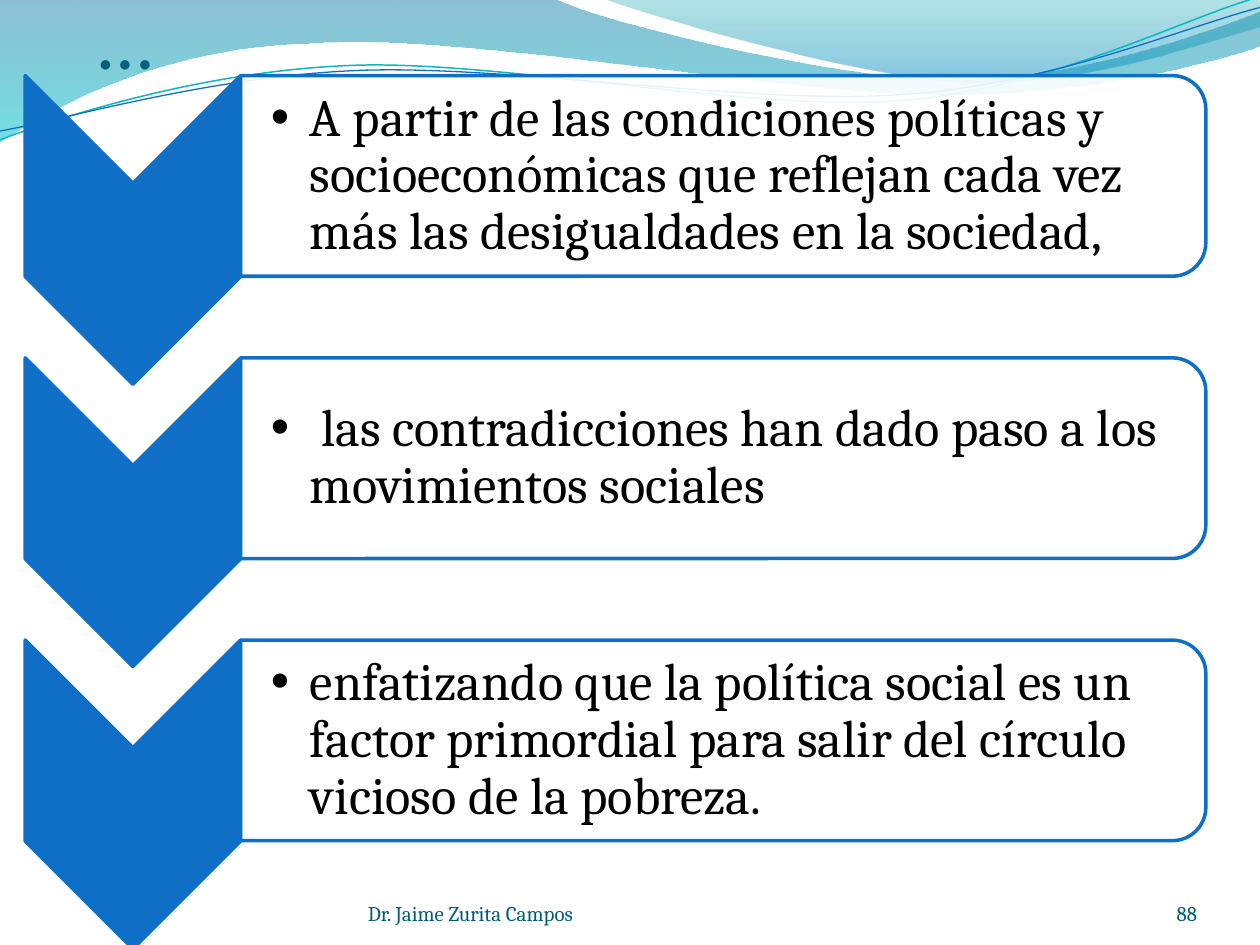
import math
import pptx
import pptx.util
import pptx.dml.color
import pptx.enum.shapes
import pptx.enum.text
import pptx.oxml
import pptx.oxml.ns
import lxml.etree

COLUMNS, ROWS = 10, 7.5
COLORS = {
    "blue": "0F6FC6", "aqua": "0AB8BF", "white": "FFFFFF", "black": "000000",
    "title": "04617B", "footer": "045D75",
    "wave_top": "0074A1", "wave_bottom": "00C6CF",
    "crest_top": "00A1A9", "crest_bottom": "008BBF",
}
STEPS = [
    "A partir de las condiciones políticas y socioeconómicas que reflejan cada vez "
    "más las desigualdades en la sociedad,",
    " las contradicciones han dado paso a los movimientos sociales",
    "enfatizando que la política social es un factor primordial para salir del "
    "círculo vicioso de la pobreza.",
]
WAVE = [
    [(0, 0)], [(4.4, -0.01)],
    [(4.76, 0.17), (6.64, 0.63), (7.58, 0.63)], [(8.53, 0.63), (9.58, 0.26), (10, 0.09)],
    [(10.01, 0.36)],
    [(9.83, 0.44), (8.7, 0.76), (7.46, 0.75)], [(6.22, 0.75), (3.82, 0.28), (2.57, 0.34)],
    [(1.29, 0.36), (0.46, 0.83), (-0.01, 1.13)], [(0, 0)],
]
CREST = [
    [(4.79, -0.01)],
    [(5.09, 0.11), (6.82, 0.62), (7.69, 0.65)], [(8.56, 0.69), (9.61, 0.32), (10, 0.21)],
    [(10, 0)], [(4.79, -0.01)],
]
AQUA_LINE = [
    [(0, 1.11)],
    [(0.48, 0.93), (1.58, 0.57), (2.77, 0.52)], [(3.95, 0.47), (5.93, 0.89), (7.13, 0.8)],
    [(8.33, 0.71), (9.38, 0.15), (9.98, -0.02)],
]
BLUE_LINE = [
    [(0, 1.04)],
    [(0.47, 0.96), (1.64, 0.61), (2.83, 0.56)], [(4.03, 0.51), (5.97, 0.84), (7.17, 0.75)],
    [(8.36, 0.67), (9.41, 0.21), (10, 0.06)],
]
LINE_TILT = -2.7

presentation = pptx.Presentation()
presentation.slide_width = pptx.util.Inches(10)
presentation.slide_height = pptx.util.Inches(7.5)


def across(columns):
    return round(presentation.slide_width * columns / COLUMNS)


def down(rows):
    return round(presentation.slide_height * rows / ROWS)


def rgb(name):
    return pptx.dml.color.RGBColor.from_string(COLORS[name])


def set_alpha(color_element, percent):
    alpha = lxml.etree.SubElement(color_element, pptx.oxml.ns.qn("a:alpha"))
    alpha.set("val", str(percent * 1000))


def set_line(shape, color, width):
    shape.line.color.rgb = rgb(color)
    shape.line.width = pptx.util.Pt(width)


def turn(point, degrees):
    x, y = point
    cosine, sine = math.cos(math.radians(degrees)), math.sin(math.radians(degrees))
    return x * cosine - y * sine, x * sine + y * cosine


def bend(shape, segments):
    steps = list(shape._element.iter(pptx.oxml.ns.qn("a:lnTo")))
    for segment in segments[1:]:
        group, steps = steps[:len(segment)], steps[len(segment):]
        if len(segment) == 3:
            curve = lxml.etree.Element(pptx.oxml.ns.qn("a:cubicBezTo"))
            group[0].addprevious(curve)
            for step in group:
                curve.append(step[0])
                step.getparent().remove(step)


def add_outline(slide, box, segments, close=False, tilt=0):
    left, top, width, height = box
    points = [turn((across(left + x * width / COLUMNS), down(top + y * height)), -tilt)
              for segment in segments for x, y in segment]
    points = [(round(x), round(y)) for x, y in points]
    builder = slide.shapes.build_freeform(*points[0])
    builder.add_line_segments(points[1:], close=close)
    shape = builder.convert_to_shape()
    bend(shape, segments)
    center = turn((shape.left + shape.width / 2, shape.top + shape.height / 2), tilt)
    shape.left = round(center[0] - shape.width / 2)
    shape.top = round(center[1] - shape.height / 2)
    shape.rotation = tilt
    shape.shadow.inherit = False
    return shape


def add_header_waves(slide, box):
    for segments, stops in (
        (WAVE, (("wave_top", 0, 45), ("wave_bottom", 1, 55))),
        (CREST, (("crest_top", 0, 30), ("crest_bottom", 0.8, 45))),
    ):
        shape = add_outline(slide, box, segments, close=True)
        shape.line.fill.background()
        shape.fill.gradient()
        shape.fill.gradient_angle = 270
        for stop, (color, position, alpha) in zip(shape.fill.gradient_stops, stops):
            stop.color.rgb = rgb(color)
            stop.position = position
        for element, (_, _, alpha) in zip(shape._element.spPr.iter(pptx.oxml.ns.qn("a:srgbClr")), stops):
            set_alpha(element, alpha)
    for segments, color, width in ((AQUA_LINE, "aqua", 0.85), (BLUE_LINE, "blue", 0.75)):
        shape = add_outline(slide, box, segments, tilt=LINE_TILT)
        shape.fill.background()
        set_line(shape, color, width)


def add_text(slide, box, text, font, size, color, anchor="BOTTOM", align="LEFT", insets=(0, 0, 0, 0)):
    left, top, width, height = box
    shape = slide.shapes.add_textbox(across(left), down(top), across(width), down(height))
    frame = shape.text_frame
    frame.word_wrap = True
    frame.vertical_anchor = getattr(pptx.enum.text.MSO_ANCHOR, anchor)
    frame.margin_left, frame.margin_right = across(insets[0]), across(insets[2])
    frame.margin_top, frame.margin_bottom = down(insets[1]), down(insets[3])
    frame.text = text
    paragraph = frame.paragraphs[0]
    paragraph.alignment = getattr(pptx.enum.text.PP_ALIGN, align)
    run = paragraph.runs[0]
    run.font.name = font
    run.font.size = pptx.util.Pt(size)
    run.font.color.rgb = rgb(color)
    return paragraph


def add_turned_shape(slide, kind, box, fill):
    left, top, width, height = box
    shift = (width - height) / 2
    shape = slide.shapes.add_shape(kind, across(left + shift), down(top - shift),
                                   across(height), down(width))
    shape.rotation = 90
    shape.shadow.inherit = False
    shape.fill.solid()
    shape.fill.fore_color.rgb = rgb(fill)
    set_line(shape, "blue", 2)
    return shape


def add_step(slide, box, text):
    left, top, width, height = box
    arrow_width, panel_height = 1.71, height * 0.65
    panel_left, panel_width = left + arrow_width, width - arrow_width
    kinds = pptx.enum.shapes.MSO_SHAPE
    add_turned_shape(slide, kinds.CHEVRON, (left, top, arrow_width, height), "blue")
    panel = add_turned_shape(slide, kinds.ROUND_2_SAME_RECTANGLE,
                             (panel_left, top, panel_width, panel_height), "white")
    set_alpha(next(panel._element.spPr.iter(pptx.oxml.ns.qn("a:srgbClr"))), 90)
    margin = 0.08
    paragraph = add_text(slide, (panel_left, top + margin, panel_width - margin, panel_height - 2 * margin),
                         text, "Cambria", 30, "black", "MIDDLE", insets=(0.24, 0.02, 0.02, 0.02))
    properties = paragraph._p.get_or_add_pPr()
    properties.set("marL", str(across(0.31)))
    properties.set("indent", str(-across(0.31)))
    for tag, name, value in (("a:buFont", "typeface", "Arial"), ("a:buChar", "char", "•")):
        lxml.etree.SubElement(properties, pptx.oxml.ns.qn(tag)).set(name, value)
    paragraph.line_spacing = 0.9


def add_steps(slide, box):
    left, top, width, pitch = box
    for index, text in enumerate(STEPS):
        add_step(slide, (left, top + index * pitch, width, 2.45), text)


def add_footer(slide, box):
    left, top, width, height = box
    add_text(slide, (left, top, 3.67, height), "Dr. Jaime Zurita Campos", "Cambria", 12, "footer")
    number_width = 0.83
    add_text(slide, (left + width - number_width, top, number_width, height), "88",
             "Cambria", 12, "footer", align="RIGHT")


def main():
    slide = presentation.slides.add_slide(presentation.slide_layouts[6])
    add_header_waves(slide, (0, 0, COLUMNS, 1))
    add_text(slide, (0.78, 0.12, 8.17, 0.56), "…", "Calibri", 45, "title", insets=(0, 0.05, 0, 0))
    add_footer(slide, (2.92, 6.95, 6.58, 0.4))
    add_steps(slide, (0.2, 0.6, 9.37, 2.24))
    presentation.save("out.pptx")


if __name__ == "__main__":
    main()
